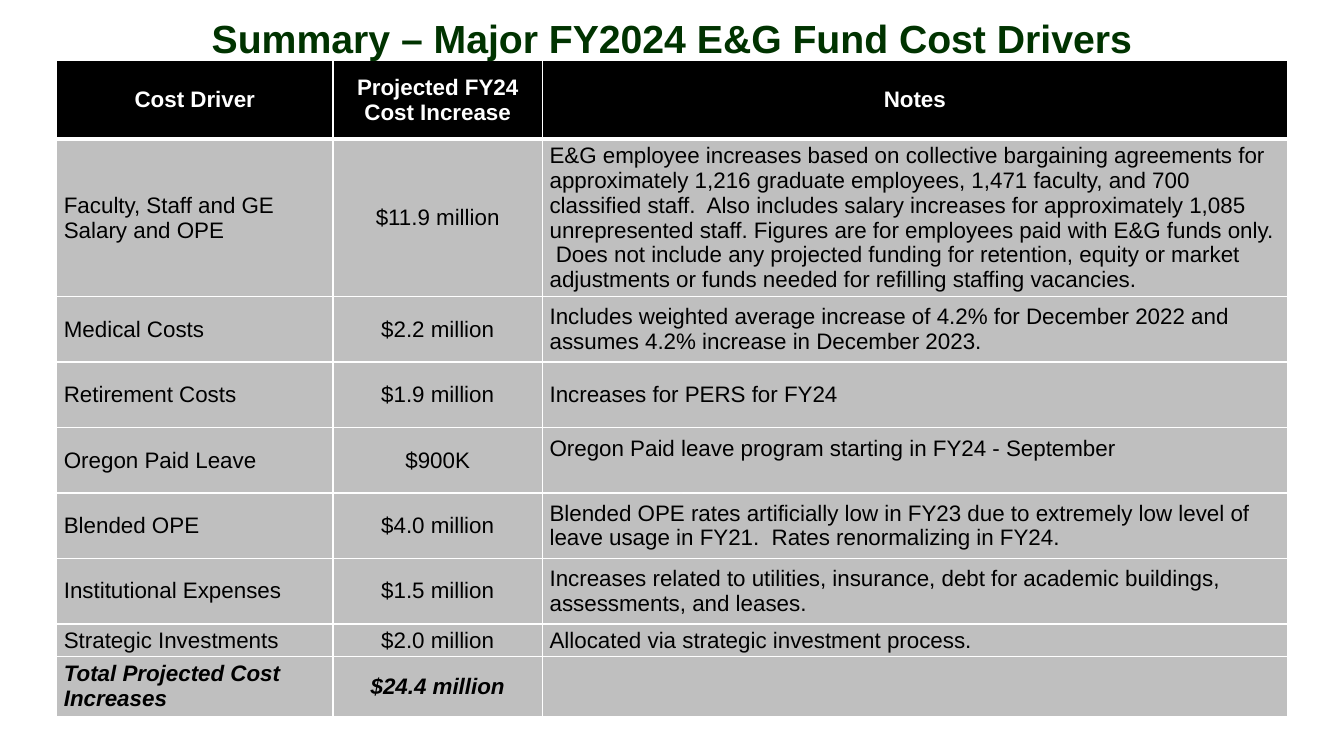
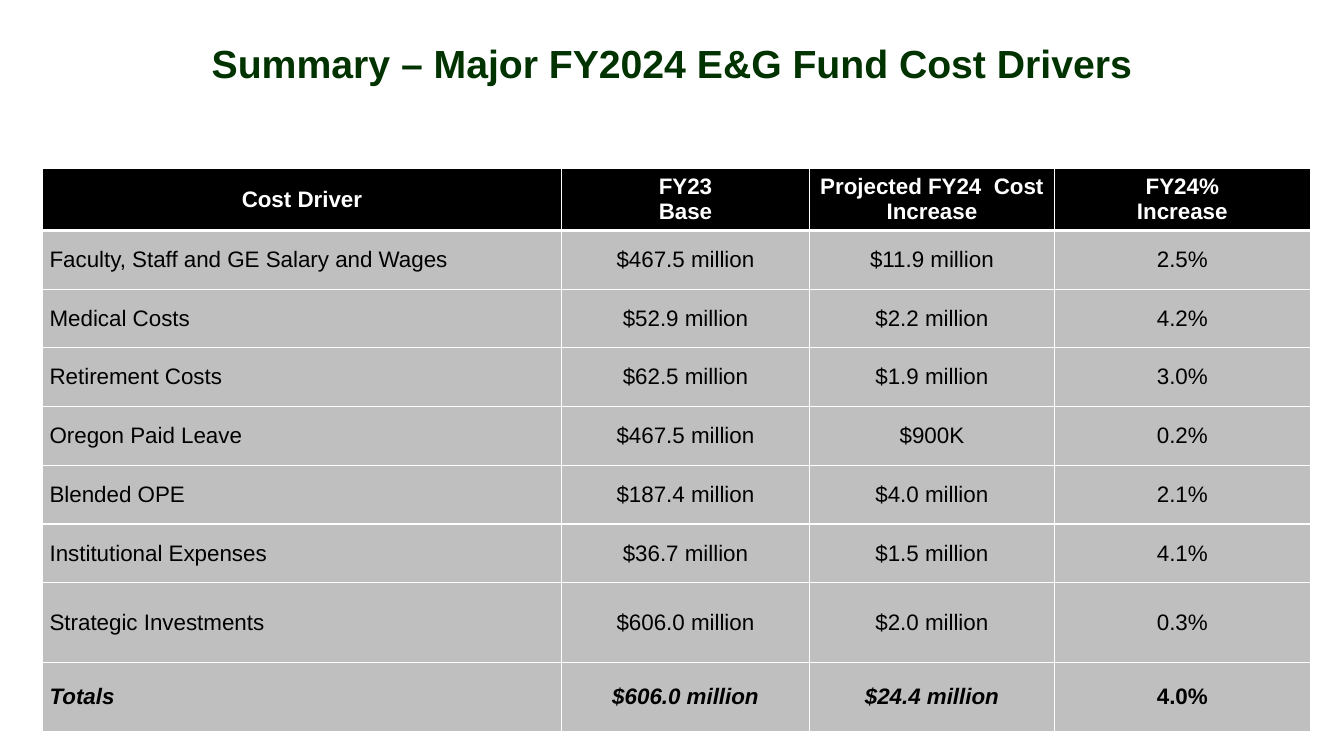
"""Build two slides of tables that summarise the FY2024 cost drivers."""
from lxml.etree import SubElement
from pptx import Presentation
from pptx.dml.color import RGBColor
from pptx.enum.text import MSO_ANCHOR as ANCHOR, PP_ALIGN as ALIGN
from pptx.oxml.ns import qn
from pptx.util import Cm, Pt

TITLE = "Summary – Major FY2024 E&G Fund Cost Drivers"

DRIVERS = {
    "columns": [6.96, 5.28, 18.77],
    "rows": [1.98, 3.94] + [1.65] * 5 + [0.81, 1.5],
    "aligns": "lcl",
    "data": [
        ["Cost Driver", "Projected FY24 Cost Increase", "Notes"],
        ["Faculty, Staff and GE Salary and OPE", "$11.9 million",
         "E&G employee increases based on collective bargaining agreements for "
         "approximately 1,216 graduate employees, 1,471 faculty, and 700 classified "
         "staff.  Also includes salary increases for approximately 1,085 "
         "unrepresented staff. Figures are for employees paid with E&G funds only. "
         " Does not include any projected funding for retention, equity or market "
         "adjustments or funds needed for refilling staffing vacancies."],
        ["Medical Costs", "$2.2 million",
         "Includes weighted average increase of 4.2% for December 2022 and assumes "
         "4.2% increase in December 2023."],
        ["Retirement Costs", "$1.9 million", "Increases for PERS for FY24"],
        ["Oregon Paid Leave", "$900K",
         "Oregon Paid leave program starting in FY24 - September"],
        ["Blended OPE", "$4.0 million",
         "Blended OPE rates artificially low in FY23 due to extremely low level of "
         "leave usage in FY21.  Rates renormalizing in FY24."],
        ["Institutional Expenses", "$1.5 million",
         "Increases related to utilities, insurance, debt for academic buildings, "
         "assessments, and leases."],
        ["Strategic Investments", "$2.0 million",
         "Allocated via strategic investment process."],
        ["Total Projected Cost Increases", "$24.4 million", ""],
    ],
}

BASES = {
    "columns": [13.08, 6.25, 6.17, 6.45],
    "rows": [1.5] + [1.48] * 6 + [2, 1.75],
    "aligns": "lccc",
    "data": [
        ["Cost Driver", "FY23\vBase", "Projected FY24  Cost Increase",
         "FY24%\nIncrease"],
        ["Faculty, Staff and GE Salary and Wages", "$467.5 million",
         "$11.9 million", "2.5%"],
        ["Medical Costs", "$52.9 million", "$2.2 million", "4.2%"],
        ["Retirement Costs", "$62.5 million", "$1.9 million", "3.0%"],
        ["Oregon Paid Leave", "$467.5 million", "$900K", "0.2%"],
        ["Blended OPE", "$187.4 million", "$4.0 million", "2.1%"],
        ["Institutional Expenses", "$36.7 million", "$1.5 million", "4.1%"],
        ["Strategic Investments", "$606.0 million", "$2.0 million", "0.3%"],
        ["Totals", "$606.0 million", "$24.4 million", "4.0%"],
    ],
}


class Deck:
    """Hold the shared style and the current slide."""

    COLORS = {"title": "003300", "head": "000000", "body": "BFBFBF",
              "text": "000000", "light": "FFFFFF"}
    FONTS = {
        "title": {"name": "Arial", "size": Pt(28), "bold": True},
        "head": {"name": "Arial", "size": Pt(16), "bold": True},
        "body": {"name": "Arial", "size": Pt(16), "bold": False},
        "total": {"name": "Arial", "size": Pt(16), "bold": True, "italic": True},
    }
    ALIGNS = {"l": ALIGN.LEFT, "c": ALIGN.CENTER}
    CELL = {"margin_left": Cm(0.18), "margin_right": Cm(0.18),
            "margin_top": Cm(0.1), "margin_bottom": Cm(0.1),
            "vertical_anchor": ANCHOR.MIDDLE}

    def __init__(self):
        self.prs = Presentation()
        self.prs.slide_width, self.prs.slide_height = Cm(33.87), Cm(19.05)
        self.s = None

    def color(self, key):
        return RGBColor.from_string(self.COLORS[key])

    def add_slide(self):
        self.s = self.prs.slides.add_slide(self.prs.slide_layouts[6])

    def set_text(self, tf, text, font, color, align):
        tf.text = text
        for p in tf.paragraphs:
            p.alignment = self.ALIGNS[align]
            for r in p.runs:
                for name, value in self.FONTS[font].items():
                    setattr(r.font, name, value)
                r.font.color.rgb = self.color(color)

    def title(self, top):
        sp = self.s.shapes.add_textbox(Cm(4.23), Cm(top), Cm(25.4), Cm(2.31))
        tf = sp.text_frame
        tf.word_wrap = True
        tf.vertical_anchor = ANCHOR.MIDDLE
        self.set_text(tf, TITLE, "title", "title", "c")

    def borders(self, cell, widths):
        tc_pr = cell._tc.get_or_add_tcPr()
        for side, width in widths.items():
            ln = SubElement(tc_pr, qn(f"a:ln{side}"), w=str(Pt(width)))
            fill = SubElement(ln, qn("a:solidFill"))
            SubElement(fill, qn("a:srgbClr"), val=self.COLORS["light"])

    def table(self, left, top, columns, rows, aligns, data):
        frame = self.s.shapes.add_table(
            len(rows), len(columns), Cm(left), Cm(top), Cm(sum(columns)), Cm(sum(rows)))
        tbl = frame.table
        tbl.horz_banding = False
        for column, width in zip(tbl.columns, columns):
            column.width = Cm(width)
        for i, (row, height) in enumerate(zip(tbl.rows, rows)):
            row.height = Cm(height)
            head = i == 0
            font = "head" if head else "total" if i == len(rows) - 1 else "body"
            widths = {"L": 1, "R": 1, "T": 3 if i == 1 else 1, "B": 3 if head else 1}
            for cell, text, align in zip(row.cells, data[i], aligns):
                for name, value in self.CELL.items():
                    setattr(cell, name, value)
                self.borders(cell, widths)
                cell.fill.solid()
                cell.fill.fore_color.rgb = self.color("head" if head else "body")
                self.set_text(cell.text_frame, text, font,
                              "light" if head else "text", "c" if head else align)
        return tbl


def main():
    deck = Deck()

    deck.add_slide()
    drivers = deck.table(1.43, 1.53, **DRIVERS)
    drivers.cell(4, 2).margin_bottom = Cm(0.7)
    deck.title(-0.2)

    deck.add_slide()
    bases = deck.table(1.07, 4.25, **BASES)
    total_share = bases.cell(8, 3).text_frame.paragraphs[0].runs[0]
    total_share.font.italic = False
    deck.title(0.43)

    deck.prs.save("out.pptx")


if __name__ == "__main__":
    main()
